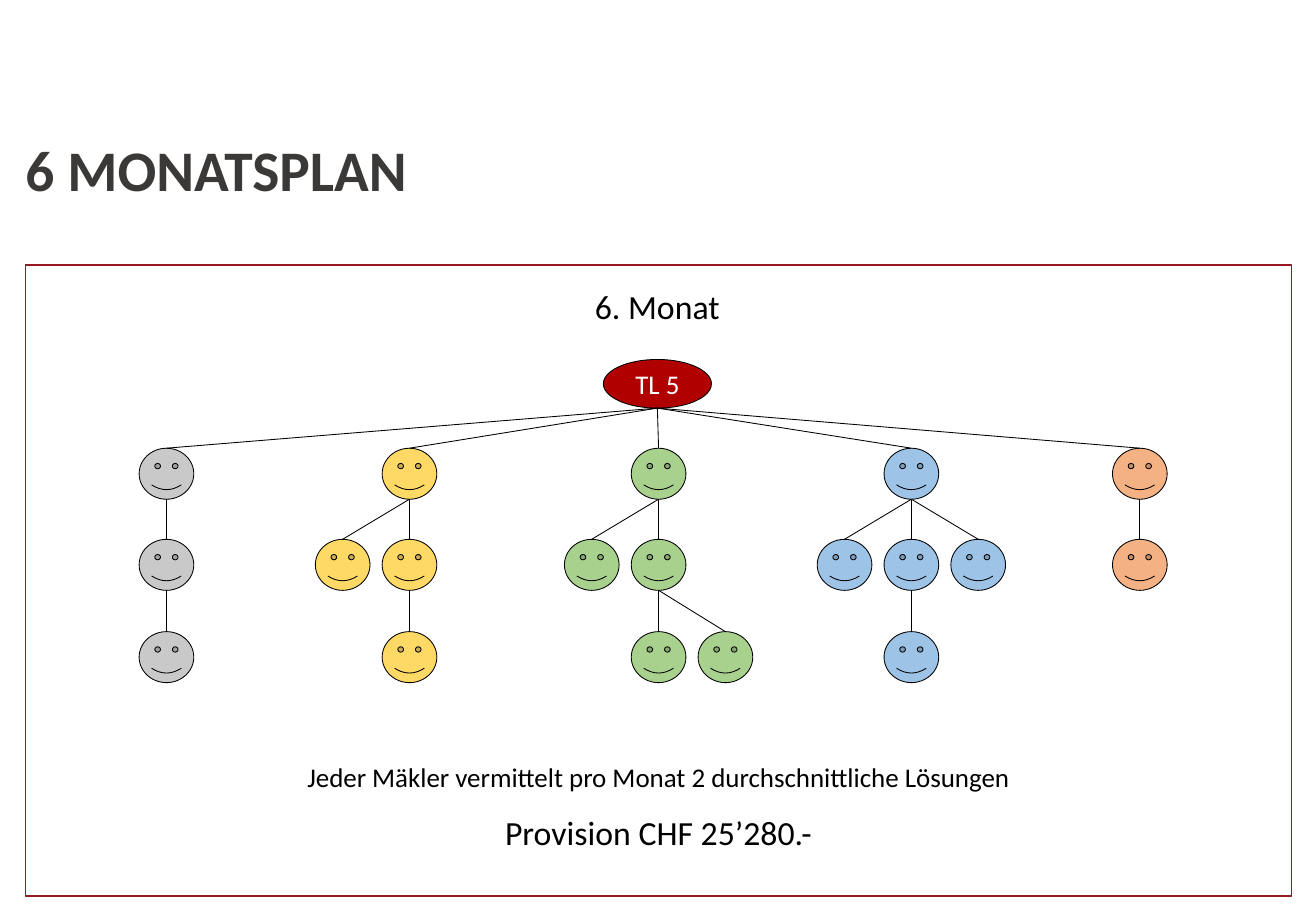
from lxml import etree
from pptx import Presentation
from pptx.dml.color import RGBColor
from pptx.enum.shapes import MSO_CONNECTOR, MSO_SHAPE
from pptx.enum.text import MSO_ANCHOR, MSO_AUTO_SIZE, PP_ALIGN
from pptx.oxml.ns import qn
from pptx.util import Inches, Pt

BLACK = RGBColor(0x00, 0x00, 0x00)
WHITE = RGBColor(0xFF, 0xFF, 0xFF)
DARK = RGBColor(0x3B, 0x38, 0x38)
FRAME_RED = RGBColor(0x96, 0x1A, 0x24)
LEADER_RED = RGBColor(0xB0, 0x00, 0x00)
GREY = RGBColor(0xC9, 0xC9, 0xC9)
YELLOW = RGBColor(0xFF, 0xD9, 0x66)
GREEN = RGBColor(0xA9, 0xD1, 0x8E)
BLUE = RGBColor(0x9D, 0xC3, 0xE6)
ORANGE = RGBColor(0xF4, 0xB1, 0x83)

prs = Presentation()
prs.slide_width, prs.slide_height = Inches(10.83), Inches(7.5)
s = prs.slides.add_slide(prs.slide_layouts[5])


def write(tf, text, size=20, color=BLACK, bold=False, align=PP_ALIGN.CENTER):
    tf.word_wrap = True
    p = tf.paragraphs[0]
    p.alignment = align
    r = p.add_run()
    r.text = text
    r.font.name, r.font.size, r.font.bold = "Calibri", Pt(size), bold
    r.font.color.rgb = color


def add_shape(kind, x, y, w, h, fill=None, line=BLACK, width=0.5):
    sp = s.shapes.add_shape(kind, Inches(x), Inches(y), Inches(w), Inches(h))
    sp.shadow.inherit = False
    if fill is None:
        sp.fill.background()
    else:
        sp.fill.solid()
        sp.fill.fore_color.rgb = fill
    sp.line.color.rgb, sp.line.width = line, Pt(width)


# Title
title = s.shapes.title
title.left, title.top = Inches(0.21), Inches(0.8)
title.width, title.height = Inches(10.43), Inches(1.18)
tf = title.text_frame
tf.margin_left = tf.margin_right = tf.margin_top = tf.margin_bottom = 0
tf.vertical_anchor = MSO_ANCHOR.MIDDLE
tf.auto_size = MSO_AUTO_SIZE.NONE
write(tf, "6 MONATSPLAN", size=34, color=DARK, bold=True, align=PP_ALIGN.LEFT)

# Frame and team leader
LEADER_X, LEADER_BOTTOM = 5.41, 3.36
add_shape(MSO_SHAPE.RECTANGLE, 0.21, 2.18, 10.42, 5.2, line=FRAME_RED, width=1)
add_shape(MSO_SHAPE.OVAL, LEADER_X - 0.445, 2.96, 0.89, 0.4, fill=LEADER_RED)

# Teams: centre, colour, and the column of each member on every level.
# Each level hangs from the middle column (0) of the level above.
FACE_W, FACE_H, COLUMN = 0.45, 0.42, 0.55
LEVEL_TOPS = [3.69, 4.44, 5.2]
teams = [
    (1.37, GREY, [[0], [0], [0]]),
    (3.37, YELLOW, [[0], [-1, 0], [0]]),
    (5.42, GREEN, [[0], [-1, 0], [0, 1]]),
    (7.5, BLUE, [[0], [-1, 0, 1], [0]]),
    (9.38, ORANGE, [[0], [0]]),
]
for center, color, levels in teams:
    parent_x, parent_y = LEADER_X, LEADER_BOTTOM
    for top, columns in zip(LEVEL_TOPS, levels):
        for column in columns:
            x = center + column * COLUMN
            add_shape(MSO_SHAPE.SMILEY_FACE, x - FACE_W / 2, top, FACE_W, FACE_H, fill=color)
            link = s.shapes.add_connector(MSO_CONNECTOR.STRAIGHT, Inches(parent_x),
                                          Inches(parent_y), Inches(x), Inches(top))
            link.line.color.rgb, link.line.width = BLACK, Pt(0.5)
            etree.SubElement(link._element.spPr, qn("a:effectLst"))
        parent_x, parent_y = center, top + FACE_H

# Centred captions
captions = [
    ("6. Monat", 4.64, 2.3, 1.54, 0.44, 20, BLACK),
    ("TL 5", 4.64, 2.98, 1.54, 0.37, 16, WHITE),
    ("Jeder Mäkler vermittelt pro Monat 2 durchschnittliche Lösungen",
     0.4, 6.21, 10.04, 0.37, 16, BLACK),
    ("Provision CHF 25’280.-", 0.4, 6.63, 10.04, 0.44, 20, BLACK),
]
for text, x, y, w, h, size, color in captions:
    box = s.shapes.add_textbox(Inches(x), Inches(y), Inches(w), Inches(h))
    write(box.text_frame, text, size=size, color=color)

prs.save("out.pptx")
